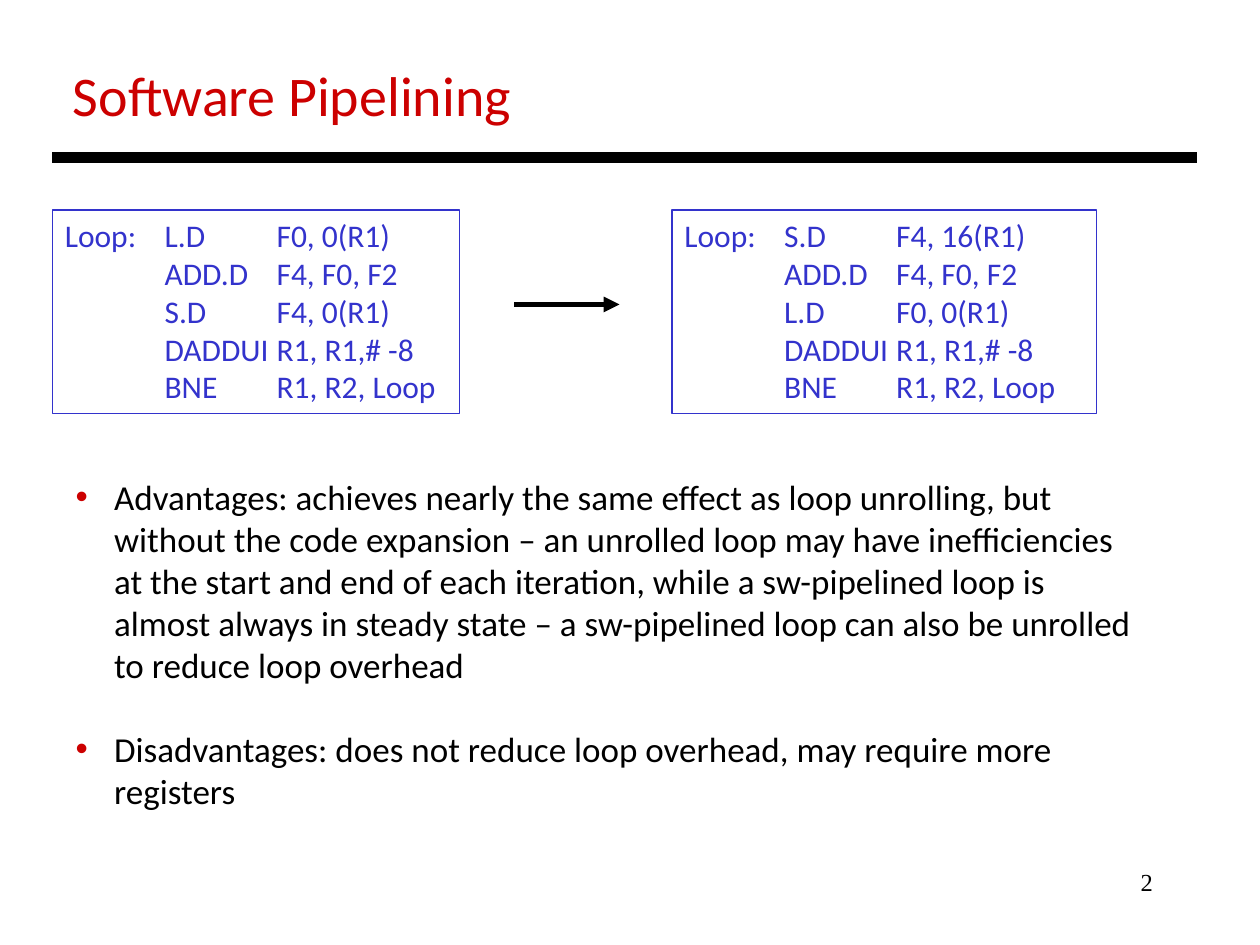
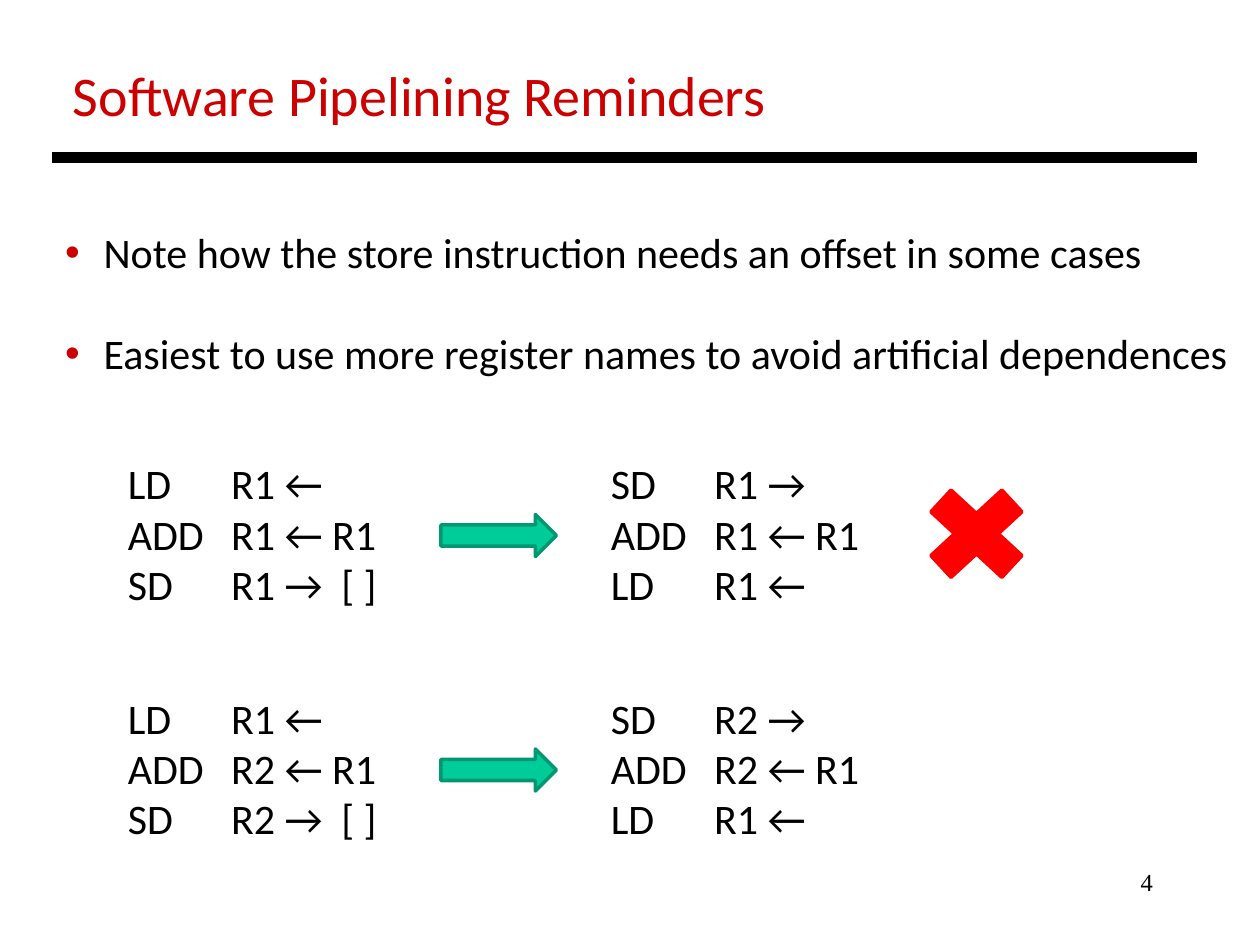
from lxml import etree
from pptx import Presentation
from pptx.dml.color import RGBColor
from pptx.enum.shapes import MSO_CONNECTOR, MSO_SHAPE
from pptx.enum.text import MSO_ANCHOR, MSO_AUTO_SIZE, PP_ALIGN
from pptx.oxml.ns import qn
from pptx.util import Pt

LEFT, RIGHT = PP_ALIGN.LEFT, PP_ALIGN.RIGHT
TOP = MSO_ANCHOR.TOP
NO_FIT = MSO_AUTO_SIZE.NONE
STRAIGHT = MSO_CONNECTOR.STRAIGHT
RECTANGLE = MSO_SHAPE.RECTANGLE
RIGHT_ARROW = MSO_SHAPE.RIGHT_ARROW
MULTIPLY = MSO_SHAPE.MATH_MULTIPLY

COLOURS = {
    "paper": "FFFFFF",
    "ink": "000000",
    "accent": "CC0000",
    "code": "3333CC",
    "arrow": "00CC99",
    "arrow edge": "009771",
    "cross": "FF0000",
}
TEXT_FONT = "Calibri"
NUMBER_FONT = "Times New Roman"
LINE_HEIGHT = 1.2
MARGIN = 30


def colour(name):
    return RGBColor.from_string(COLOURS[name])


class SlideBuilder:
    """Holds the shared style and the slide being filled."""

    def __init__(self, deck):
        self.deck = deck
        self.page = None

    def start(self, title, number):
        """Add a slide with its title, rule and page number."""
        self.page = self.deck.slides.add_slide(self.deck.slide_layouts[1])
        fill = self.page.background.fill
        fill.solid()
        fill.fore_color.rgb = colour("paper")

        heading = self.page.shapes.title
        self.place(heading, 34.5, 31, 620, 46)
        self.add_text(heading.text_frame.paragraphs[0], title, 32, "accent")
        self.line(MARGIN, 90, 684, 90, 6)

        box = self.page.shapes.add_textbox(Pt(516), Pt(492), Pt(150), Pt(36))
        self.prepare(box)
        self.add_text(box.text_frame.paragraphs[0], number, 14, "ink", NUMBER_FONT, RIGHT)

    def place(self, shape, left, top, width, height):
        shape.left, shape.top = Pt(left), Pt(top)
        shape.width, shape.height = Pt(width), Pt(height)
        self.prepare(shape)

    def prepare(self, shape):
        """Make the text wrap and start at the top of the shape."""
        frame = shape.text_frame
        frame.word_wrap = True
        frame.auto_size = NO_FIT
        frame.vertical_anchor = TOP

    def add_text(self, para, text, size, ink, font=TEXT_FONT, align=LEFT):
        para.alignment = align
        para.space_before = Pt(0)
        span = para.add_run()
        span.text = text
        span.font.name = font
        span.font.size = Pt(size)
        span.font.color.rgb = colour(ink)

    def paragraphs(self, frame, lines, size, ink):
        """Add one paragraph per line and yield each of them."""
        for index, text in enumerate(lines):
            para = frame.add_paragraph() if index else frame.paragraphs[0]
            self.add_text(para, text, size, ink)
            yield para

    def bullets(self, items, left, top, width, height, size):
        body = self.page.placeholders[1]
        self.place(body, left, top, width, height)
        for para in self.paragraphs(body.text_frame, items, size, "ink"):
            para.space_after = Pt(LINE_HEIGHT * size)
            properties = para._p.get_or_add_pPr()
            properties.set("marL", str(Pt(22)))
            properties.set("indent", str(-Pt(22)))
            tint = etree.SubElement(properties, qn("a:buClr"))
            etree.SubElement(tint, qn("a:srgbClr"), val=COLOURS["accent"])
            etree.SubElement(properties, qn("a:buChar"), char="•")

    def code(self, lines, left, top, width, height, size, ink, tabs, framed=False):
        """Add tab-aligned instructions, with a thin frame if wanted."""
        area = Pt(left), Pt(top), Pt(width), Pt(height)
        if framed:
            box = self.page.shapes.add_shape(RECTANGLE, *area)
            box.shadow.inherit = False
            box.fill.background()
            box.line.color.rgb = colour(ink)
            box.line.width = Pt(0.75)
        else:
            box = self.page.shapes.add_textbox(*area)
        self.prepare(box)
        for para in self.paragraphs(box.text_frame, lines, size, ink):
            stops = etree.SubElement(para._p.get_or_add_pPr(), qn("a:tabLst"))
            for tab in tabs:
                etree.SubElement(stops, qn("a:tab"), pos=str(Pt(tab)), algn="l")

    def line(self, x1, y1, x2, y2, weight, arrow=False):
        link = self.page.shapes.add_connector(STRAIGHT, Pt(x1), Pt(y1), Pt(x2), Pt(y2))
        link.line.color.rgb = colour("ink")
        link.line.width = Pt(weight)
        properties = link._element.spPr
        if arrow:
            etree.SubElement(properties.find(qn("a:ln")), qn("a:tailEnd"), type="triangle")
        etree.SubElement(properties, qn("a:effectLst"))

    def symbol(self, kind, left, top, width, height, fill, edge):
        shape = self.page.shapes.add_shape(kind, Pt(left), Pt(top), Pt(width), Pt(height))
        shape.shadow.inherit = False
        shape.fill.solid()
        shape.fill.fore_color.rgb = colour(fill)
        shape.line.color.rgb = colour(edge)
        shape.line.width = Pt(2)


def add_pipelining(builder):
    builder.start("Software Pipelining", "2")
    loop_end = ["\tDADDUI\tR1, R1,# -8", "\tBNE\tR1, R2, Loop"]
    plain_loop = ["Loop:\tL.D\tF0, 0(R1)", "\tADD.D\tF4, F0, F2", "\tS.D\tF4, 0(R1)"]
    pipelined_loop = ["Loop:\tS.D\tF4, 16(R1)", "\tADD.D\tF4, F0, F2", "\tL.D\tF0, 0(R1)"]
    for lines, left, width in ((plain_loop, MARGIN, 232.5), (pipelined_loop, 384, 242.5)):
        builder.code(lines + loop_end, left, 120, width, 116.5, 18, "code", (57, 121), framed=True)
    builder.line(294, 174, 354, 174, 3, arrow=True)
    builder.bullets([
        "Advantages: achieves nearly the same effect as loop unrolling, but "
        "without the code expansion – an unrolled loop may have inefficiencies "
        "at the start and end of each iteration, while a sw-pipelined loop is "
        "almost always in steady state – a sw-pipelined loop can also be unrolled "
        "to reduce loop overhead",
        "Disadvantages: does not reduce loop overhead, may require more registers",
    ], 36, 268, 620, 201, 20)


def add_reminders(builder):
    builder.start("Software Pipelining Reminders", "4")
    builder.bullets([
        "Note how the store instruction needs an offset in some cases",
        "Easiest to use more register names to avoid artificial dependences",
    ], MARGIN, 126, 684, 120, 24)
    for top, register in ((258, "R1"), (392, "R2")):
        add = f"ADD\t{register} ← R1"
        load = "LD\tR1 ←"
        before = [load, add, f"SD\t{register} →\t[ ]"]
        after = [f"SD\t{register} →", add, load]
        for lines, left in ((before, 66), (after, 342)):
            builder.code(lines, left, top, 164, 94, 24, "ink", (59, 122))
        builder.symbol(RIGHT_ARROW, 252, top + 36, 66, 24, "arrow", "arrow edge")
    builder.symbol(MULTIPLY, 519, 269, 78, 72, "cross", "cross")


def main():
    deck = Presentation()
    deck.slide_width, deck.slide_height = Pt(720), Pt(540)
    builder = SlideBuilder(deck)
    add_pipelining(builder)
    add_reminders(builder)
    deck.save("out.pptx")


if __name__ == "__main__":
    main()
